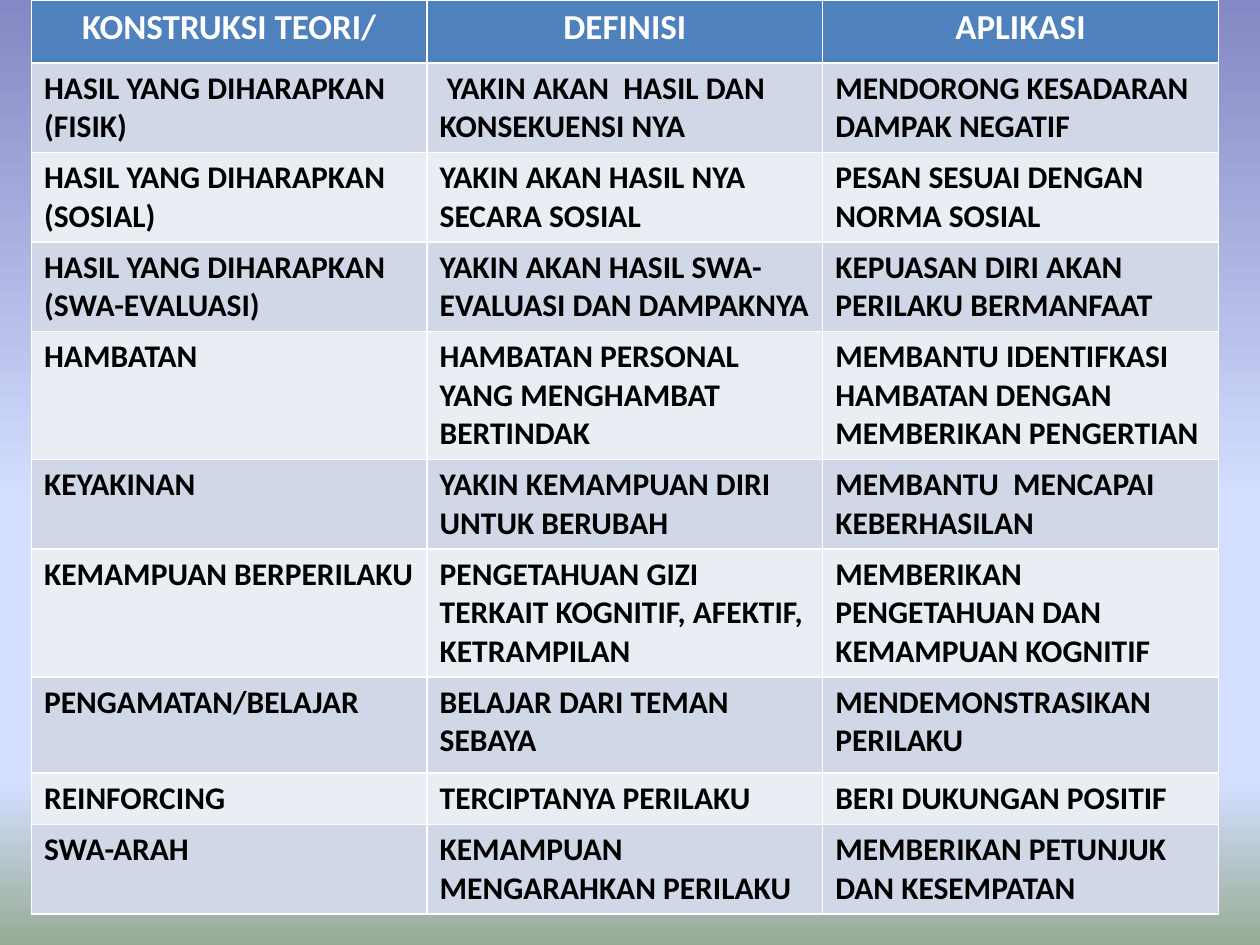
"""Build a one-slide table of theory constructs, definitions and applications."""
from lxml.etree import SubElement
from pptx import Presentation
from pptx.dml.color import RGBColor
from pptx.enum.text import PP_ALIGN
from pptx.oxml.ns import qn
from pptx.util import Inches, Pt

HEADERS = ("KONSTRUKSI TEORI/", "DEFINISI", "APLIKASI")
ROWS = [
    (0.7, "HASIL YANG DIHARAPKAN (FISIK)", " YAKIN AKAN  HASIL DAN KONSEKUENSI NYA",
     "MENDORONG KESADARAN DAMPAK NEGATIF"),
    (0.7, "HASIL YANG DIHARAPKAN (SOSIAL)", "YAKIN AKAN HASIL NYA SECARA SOSIAL",
     "PESAN SESUAI DENGAN NORMA SOSIAL"),
    (0.7, "HASIL YANG DIHARAPKAN (SWA-EVALUASI)", "YAKIN AKAN HASIL SWA-EVALUASI DAN DAMPAKNYA",
     "KEPUASAN DIRI AKAN PERILAKU BERMANFAAT"),
    (1.01, "HAMBATAN", "HAMBATAN PERSONAL YANG MENGHAMBAT BERTINDAK",
     "MEMBANTU IDENTIFKASI HAMBATAN DENGAN MEMBERIKAN PENGERTIAN"),
    (0.7, "KEYAKINAN", "YAKIN KEMAMPUAN DIRI UNTUK BERUBAH",
     "MEMBANTU  MENCAPAI KEBERHASILAN"),
    (1, "KEMAMPUAN BERPERILAKU", "PENGETAHUAN GIZI TERKAIT KOGNITIF, AFEKTIF, KETRAMPILAN",
     "MEMBERIKAN PENGETAHUAN DAN KEMAMPUAN KOGNITIF"),
    (0.76, "PENGAMATAN/BELAJAR", "BELAJAR DARI TEMAN SEBAYA", "MENDEMONSTRASIKAN PERILAKU"),
    (0.41, "REINFORCING", "TERCIPTANYA PERILAKU", "BERI DUKUNGAN POSITIF"),
    (0.7, "SWA-ARAH", "KEMAMPUAN MENGARAHKAN PERILAKU", "MEMBERIKAN PETUNJUK DAN KESEMPATAN"),
]
HEADER_HEIGHT, COLUMN_WIDTH = 0.5, 3.14

WHITE = RGBColor(0xFF, 0xFF, 0xFF)
BLACK = RGBColor(0x00, 0x00, 0x00)
HEADER_FILL = RGBColor(0x4F, 0x81, 0xBD)
BAND_FILLS = (RGBColor(0xD0, 0xD8, 0xE8), RGBColor(0xE9, 0xED, 0xF4))
SKY = RGBColor(0xD4, 0xDE, 0xFF)
BACKGROUND = [(0, RGBColor(0x84, 0x88, 0xC4)), (53, SKY), (83, SKY),
              (100, RGBColor(0x96, 0xAB, 0x94))]

HEADER_FONT = {"name": "Calibri", "size": Pt(20), "bold": True}
BODY_FONT = {**HEADER_FONT, "size": Pt(18)}


def set_background(s):
    fill = s.background.fill
    fill.gradient()
    fill.gradient_angle = 270
    stops = s.element.find(".//" + qn("a:gsLst"))
    for stop in list(stops):
        stops.remove(stop)
    for percent, color in BACKGROUND:
        stop = SubElement(stops, qn("a:gs"), pos=str(percent * 1000))
        SubElement(stop, qn("a:srgbClr"), val=str(color))


def fill_row(table, index, height, texts, fill, font, color, align):
    table.rows[index].height = Inches(height)
    for cell, text in zip(table.rows[index].cells, texts):
        cell.fill.solid()
        cell.fill.fore_color.rgb = fill
        p = cell.text_frame.paragraphs[0]
        p.alignment = align
        r = p.add_run()
        r.text = text
        for name, value in font.items():
            setattr(r.font, name, value)
        r.font.color.rgb = color


def main():
    prs = Presentation()
    prs.slide_width, prs.slide_height = Inches(10), Inches(7.5)
    s = prs.slides.add_slide(prs.slide_layouts[6])
    set_background(s)

    height = HEADER_HEIGHT + sum(row[0] for row in ROWS)
    table = s.shapes.add_table(len(ROWS) + 1, len(HEADERS), Inches(0.25), 0,
                               Inches(COLUMN_WIDTH * len(HEADERS)), Inches(height)).table
    for column in table.columns:
        column.width = Inches(COLUMN_WIDTH)
    fill_row(table, 0, HEADER_HEIGHT, HEADERS, HEADER_FILL, HEADER_FONT, WHITE, PP_ALIGN.CENTER)
    for i, (row_height, *texts) in enumerate(ROWS):
        fill_row(table, i + 1, row_height, texts, BAND_FILLS[i % 2], BODY_FONT, BLACK, PP_ALIGN.LEFT)

    prs.save("out.pptx")


if __name__ == "__main__":
    main()
